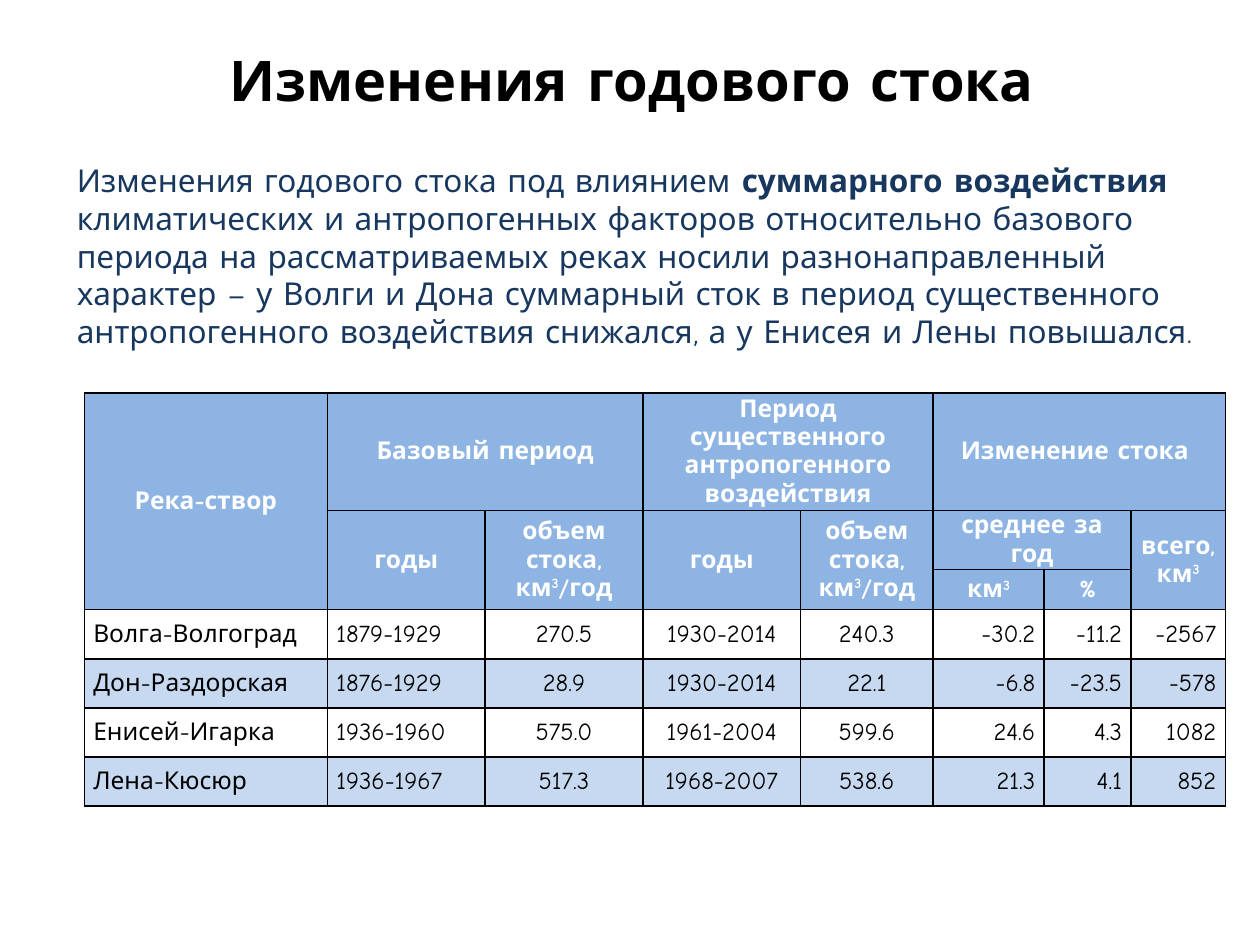
"""Builds a slide on changes in annual river runoff, with a table by river."""
import lxml.etree
import pptx
import pptx.dml.color
import pptx.enum.text
import pptx.oxml.ns
import pptx.util

Cm, Pt = pptx.util.Cm, pptx.util.Pt
ALIGN = pptx.enum.text.PP_ALIGN
MIDDLE = pptx.enum.text.MSO_ANCHOR.MIDDLE
COLORS = {"black": "000000", "navy": "17375E", "white": "FFFFFF",
          "header": "8EB4E3", "band": "C6D9F1"}


def add_run(paragraph, text, size, color, bold=False, raised=False):
    run = paragraph.add_run()
    run.text = text
    run.font.name = "Comic Neue"
    run.font.size = Pt(size)
    run.font.bold = bold
    run.font.color.rgb = pptx.dml.color.RGBColor.from_string(COLORS[color])
    if raised:
        run._r.get_or_add_rPr().set("baseline", "30000")


def style_cell(cell, fill):
    cell.vertical_anchor = MIDDLE
    cell.margin_left = cell.margin_right = Cm(0.18)
    cell.margin_top = cell.margin_bottom = 0
    properties = cell._tc.get_or_add_tcPr()
    for side in ("a:lnL", "a:lnR", "a:lnT", "a:lnB"):
        border = lxml.etree.SubElement(properties, pptx.oxml.ns.qn(side), w=str(Pt(1)))
        solid = lxml.etree.SubElement(border, pptx.oxml.ns.qn("a:solidFill"))
        lxml.etree.SubElement(solid, pptx.oxml.ns.qn("a:srgbClr"), val=COLORS["black"])
    if fill:
        cell.fill.solid()
        cell.fill.fore_color.rgb = pptx.dml.color.RGBColor.from_string(COLORS[fill])
    else:
        cell.fill.background()


deck = pptx.Presentation()
deck.slide_width, deck.slide_height = Cm(25.4), Cm(19.05)
slide = deck.slides.add_slide(deck.slide_layouts[6])

title = slide.shapes.add_textbox(Cm(1.3), 0, Cm(22.86), Cm(3.18)).text_frame
title.word_wrap = True
title.vertical_anchor = MIDDLE
title.paragraphs[0].alignment = ALIGN.CENTER
add_run(title.paragraphs[0], "Изменения годового стока", 32, "black", bold=True)

summary = slide.shapes.add_textbox(Cm(1.3), Cm(3.12), Cm(23.6), Cm(4.09)).text_frame
summary.word_wrap = True
for text, bold in [
    ("Изменения годового стока под влиянием ", False),
    ("суммарного воздействия ", True),
    ("климатических и антропогенных факторов относительно базового периода "
     "на рассматриваемых реках носили разнонаправленный характер – у Волги и Дона "
     "суммарный сток в период существенного антропогенного воздействия снижался, "
     "а у Енисея и Лены повышался.", False),
]:
    add_run(summary.paragraphs[0], text, 18, "navy", bold)

column_widths = [4.9, 3.18, 3.18, 3.18, 2.67, 2.24, 1.75, 1.9]
row_heights = [2.01, 0.69, 0.81] + [0.99] * 4
runoff = slide.shapes.add_table(
    len(row_heights), len(column_widths), Cm(1.7), Cm(7.92),
    Cm(sum(column_widths)), Cm(sum(row_heights))).table
for column, width in zip(runoff.columns, column_widths):
    column.width = Cm(width)
for row, height in zip(runoff.rows, row_heights):
    row.height = Cm(height)

volume = ["объем стока, км", "3", "/год"]
headings = [
    (0, 0, 3, 1, ["Река-створ"]),
    (0, 1, 1, 2, ["Базовый период"]),
    (0, 3, 1, 2, ["Период существенного антропогенного воздействия"]),
    (0, 5, 1, 3, ["Изменение стока "]),
    (1, 1, 2, 1, ["годы"]),
    (1, 2, 2, 1, volume),
    (1, 3, 2, 1, ["годы"]),
    (1, 4, 2, 1, volume),
    (1, 5, 1, 2, ["среднее за год"]),
    (1, 7, 2, 1, ["всего, км", "3"]),
    (2, 5, 1, 1, ["км", "3"]),
    (2, 6, 1, 1, ["%"]),
]
rivers = [
    ["Волга-Волгоград", "1879-1929", "270.5", "1930-2014", "240.3", "-30.2", "-11.2", "-2567"],
    ["Дон-Раздорская", "1876-1929", "28.9", "1930-2014", "22.1", "-6.8", "-23.5", "-578"],
    ["Енисей-Игарка", "1936-1960", "575.0", "1961-2004", "599.6", "24.6", "4.3", "1082"],
    ["Лена-Кюсюр", "1936-1967", "517.3", "1968-2007", "538.6", "21.3", "4.1", "852"],
]
header_rows = len(row_heights) - len(rivers)
for r in range(len(row_heights)):
    for c in range(len(column_widths)):
        band = "band" if (r - header_rows) % 2 else None
        style_cell(runoff.cell(r, c), "header" if r < header_rows else band)

for r, c, height, width, parts in headings:
    heading = runoff.cell(r, c)
    if height * width > 1:
        heading.merge(runoff.cell(r + height - 1, c + width - 1))
    paragraph = heading.text_frame.paragraphs[0]
    paragraph.alignment = ALIGN.CENTER
    for part in parts:
        add_run(paragraph, part, 14, "white", bold=True, raised=part == "3")

column_aligns = [ALIGN.LEFT] * 2 + [ALIGN.CENTER] * 3 + [ALIGN.RIGHT] * 3
for r, river in enumerate(rivers, header_rows):
    for c, (value, align) in enumerate(zip(river, column_aligns)):
        paragraph = runoff.cell(r, c).text_frame.paragraphs[0]
        paragraph.alignment = align
        paragraph.space_before = paragraph.space_after = Pt(6)
        add_run(paragraph, value, 14, "black")

deck.save("out.pptx")
